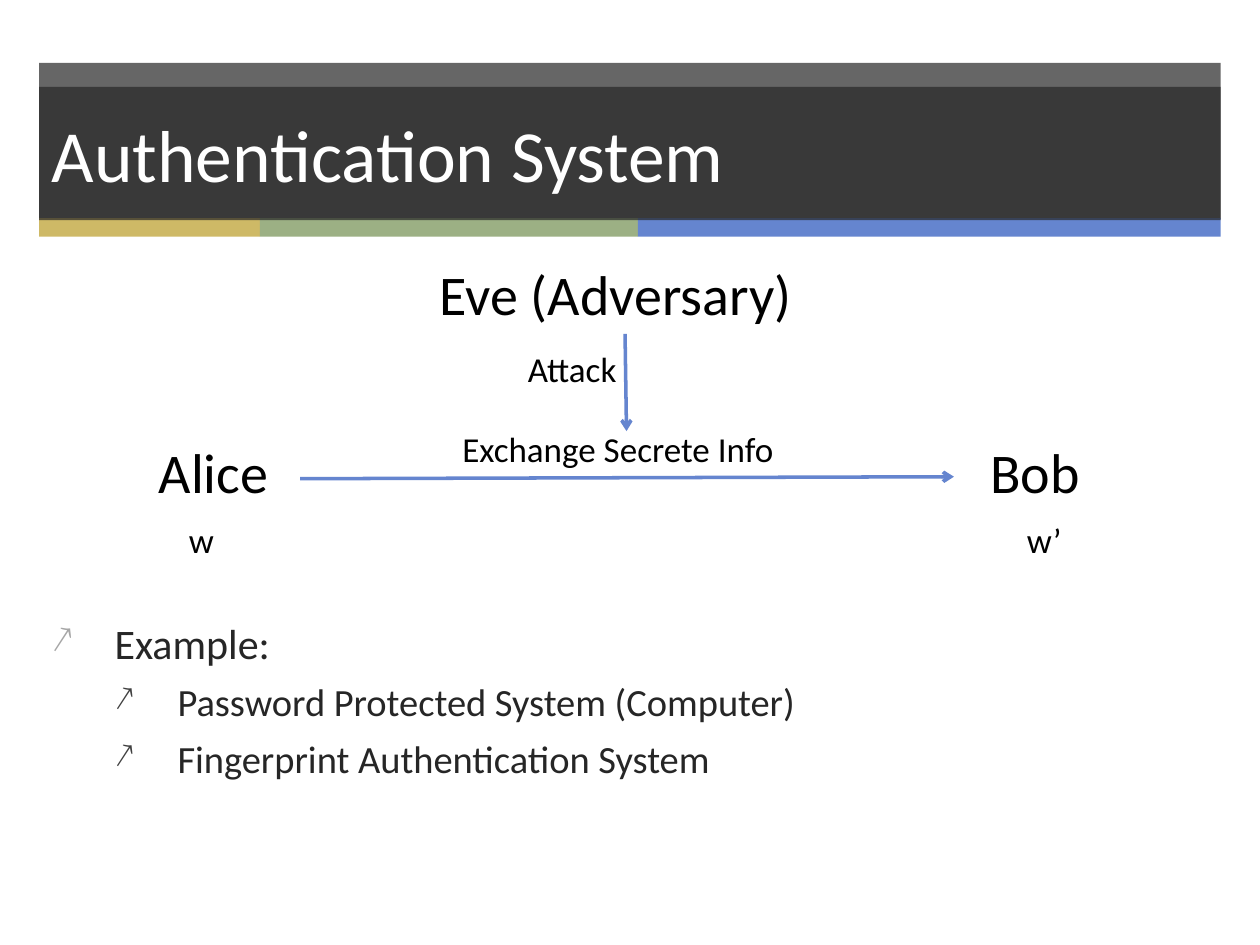
from lxml.etree import SubElement
from pptx import Presentation
from pptx.dml.color import RGBColor
from pptx.enum.shapes import MSO_CONNECTOR as Connector, MSO_SHAPE as Shape
from pptx.enum.text import MSO_ANCHOR as Anchor, MSO_AUTO_SIZE as AutoSize
from pptx.oxml.ns import qn
from pptx.util import Cm, Pt

COLORS = {
    "band": "262626", "gold": "CEB966", "green": "9CB084", "blue": "6585CF",
    "title": "FFFFFF", "label": "000000", "body": "262626",
    "bullet": "A6A6A6", "sub_bullet": "404040",
}
FONT = "Calibri"


def rgb(name):
    return RGBColor.from_string(COLORS[name])


def add_bar(slide, left, top, width, height, color, opacity=100):
    bar = slide.shapes.add_shape(Shape.RECTANGLE, Cm(left), Cm(top), Cm(width), Cm(height))
    bar.shadow.inherit = False
    bar.fill.solid()
    bar.fill.fore_color.rgb = rgb(color)
    bar.line.fill.background()
    if opacity < 100:
        tint = bar.fill._xPr.find(qn("a:solidFill"))[0]
        SubElement(tint, qn("a:alpha"), val=str(opacity * 1000))
    return bar


def add_text(slide, box, text, size=20, color="label", wrap=True,
             anchor=Anchor.TOP, grow=True):
    label = slide.shapes.add_textbox(*map(Cm, box))
    frame = label.text_frame
    frame.word_wrap = wrap
    frame.vertical_anchor = anchor
    frame.auto_size = AutoSize.SHAPE_TO_FIT_TEXT if grow else AutoSize.NONE
    write(frame.paragraphs[0], text, size, color)
    return label


def write(paragraph, text, size, color):
    run = paragraph.add_run()
    run.text = text
    run.font.name = FONT
    run.font.size = Pt(size)
    run.font.color.rgb = rgb(color)


def add_bullet(paragraph, indent, color):
    props = paragraph._p.get_or_add_pPr()
    props.set("marL", str(Cm(indent)))
    props.set("indent", str(-Cm(1.27)))
    bullet_color = SubElement(props, qn("a:buClr"))
    SubElement(bullet_color, qn("a:srgbClr"), val=COLORS[color])
    SubElement(props, qn("a:buSzPct"), val="90000")
    SubElement(props, qn("a:buChar"), char="↗")


def add_arrow(slide, x1, y1, x2, y2):
    arrow = slide.shapes.add_connector(Connector.STRAIGHT, Cm(x1), Cm(y1), Cm(x2), Cm(y2))
    arrow.line.color.rgb = rgb("blue")
    arrow.line.width = Pt(2)
    SubElement(arrow.line._get_or_add_ln(), qn("a:tailEnd"), type="arrow")
    SubElement(arrow._element.spPr, qn("a:effectLst"))


def add_header(slide, left, top, width, title):
    add_bar(slide, left, top, width, 3.15, "band", opacity=70)
    stripe_left = left
    for color, stripe_width in (("gold", 4.45), ("green", 7.62), ("blue", width - 12.07)):
        add_bar(slide, stripe_left, top + 3.13, stripe_width, 0.37, color)
        stripe_left += stripe_width
    add_bar(slide, left, top + 0.48, width, 2.69, "band", opacity=70)
    add_text(slide, (left, top + 0.48, width, 2.69), title, size=42,
             color="title", anchor=Anchor.MIDDLE, grow=False)


def add_exchange(slide, left, top):
    parties = (
        ("Alice", 0, 3.58, 4.88),
        ("Bob", 16.76, 3.58, 4.88),
        ("Eve (Adversary)", 5.66, 0, 10.59),
    )
    for name, x, y, width in parties:
        add_text(slide, (left + x, top + y, width, 1.62), name, size=32)
    captions = (
        ("Exchange Secrete Info", 6.12, 3.38, 6.83, False),
        ("Attack", 7.44, 1.78, 2.34, False),
        ("w", 0.61, 5.21, 1.47, True),
        ("w’", 17.5, 5.21, 1.47, True),
    )
    for caption, x, y, width, wrap in captions:
        add_text(slide, (left + x, top + y, width, 1.11), caption, wrap=wrap)
    add_arrow(slide, left + 3.1, top + 4.54, left + 16.28, top + 4.5)
    add_arrow(slide, left + 9.65, top + 1.62, left + 9.68, top + 3.58)


def add_examples(slide, box, heading, examples):
    body = add_text(slide, box, heading, size=24, color="body", grow=False)
    first = body.text_frame.paragraphs[0]
    first.space_before = Pt(20)
    add_bullet(first, 1.27, "bullet")
    for example in examples:
        paragraph = body.text_frame.add_paragraph()
        paragraph.level = 1
        paragraph.space_before = Pt(6)
        add_bullet(paragraph, 2.54, "sub_bullet")
        write(paragraph, example, 22, "body")


def main():
    deck = Presentation()
    deck.slide_width, deck.slide_height = Cm(25.4), Cm(19.05)
    slide = deck.slides.add_slide(deck.slide_layouts[6])
    margin, width = 0.79, 23.82
    add_header(slide, margin, 1.27, width, "Authentication System")
    add_examples(slide, (margin, 12.32, width, 4.7), "Example:", (
        "Password Protected System (Computer)",
        "Fingerprint Authentication System",
    ))
    add_exchange(slide, 2.95, 5.11)
    deck.save("out.pptx")


if __name__ == "__main__":
    main()
